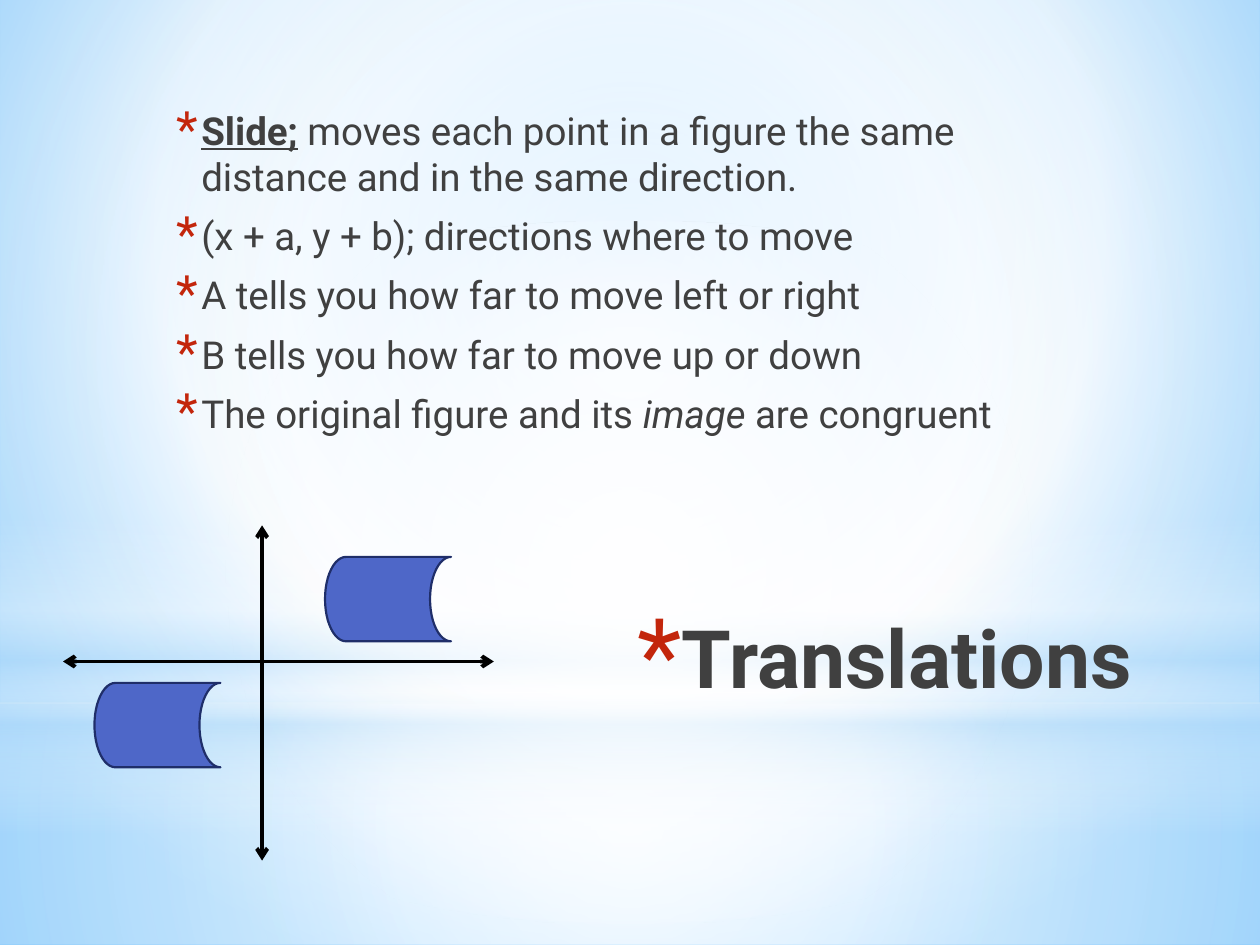
from lxml import etree
from pptx import Presentation
from pptx.dml.color import RGBColor
from pptx.enum.shapes import MSO_CONNECTOR, MSO_SHAPE
from pptx.enum.text import MSO_ANCHOR, PP_ALIGN
from pptx.oxml import parse_xml
from pptx.oxml.ns import qn
from pptx.util import Inches, Pt

RECTANGLE, OVAL = MSO_SHAPE.RECTANGLE, MSO_SHAPE.OVAL
FIGURE = MSO_SHAPE.FLOWCHART_STORED_DATA
STRAIGHT = MSO_CONNECTOR.STRAIGHT
TOP = MSO_ANCHOR.TOP
LEFT, RIGHT = PP_ALIGN.LEFT, PP_ALIGN.RIGHT

FONT = "Roboto"
TEXT = RGBColor(0x40, 0x40, 0x40)
BULLET = RGBColor(0xC3, 0x26, 0x0C)
FIGURE_FILL = RGBColor(0x4E, 0x67, 0xC8)
FIGURE_LINE = RGBColor(0x1F, 0x2E, 0x69)
BLACK = RGBColor(0, 0, 0)
WHITE = RGBColor(0xFF, 0xFF, 0xFF)
PALE_BLUE = RGBColor(0xB4, 0xDC, 0xFA)
SKY_BLUE = RGBColor(0x9E, 0xD5, 0xFF)
DEEP_BLUE = RGBColor(0x5B, 0xB9, 0xFF)

NAMESPACE = "http://schemas.openxmlformats.org/drawingml/2006/main"
CENTRE = (50, 50, 50, 50)
BACKDROP_STOPS = [(0, SKY_BLUE, 100), (60, WHITE, 100), (100, DEEP_BLUE, 100)]
# Shape, box, gradient stops (position, colour, opacity), focus or None for vertical
GLOWS = [
    (RECTANGLE, (0, 5.58, 10, 1.92),
     [(0, WHITE, 91), (37, WHITE, 76), (100, PALE_BLUE, 79)], CENTRE),
    (RECTANGLE, (0, 0, 10, 5.58),
     [(0, WHITE, 89), (48, WHITE, 62), (100, PALE_BLUE, 79)], CENTRE),
    (RECTANGLE, (0, 4.12, 10, 2.5),
     [(0, WHITE, 0), (29, WHITE, 30), (45, PALE_BLUE, 40),
      (55, WHITE, 26), (65, PALE_BLUE, 60), (100, WHITE, 0)], None),
    (OVAL, (0, 1.75, 10, 5.58), [(0, WHITE, 100), (56, WHITE, 0)], CENTRE),
]

TITLE = [[("Translations", {"bold": True})]]
POINTS = [
    [("Slide;", {"bold": True, "underline": True}), (" ", {"bold": True}),
     ("moves each point in a figure the same distance and in the same direction.", {})],
    [("(x + a, y + b); directions where to move", {})],
    [("A tells you how far to move left or right", {})],
    [("B tells you how far to move up or down", {})],
    [("The original figure and its ", {}), ("image", {"italic": True}),
     (" are congruent", {})],
]


def set_gradient(fill, properties, stops, focus):
    """Replace the fill held by a properties element with a gradient."""
    fill.solid()
    stop_xml = "".join(
        f'<a:gs pos="{position * 1000}"><a:srgbClr val="{colour}">'
        f'<a:alpha val="{opacity * 1000}"/></a:srgbClr></a:gs>'
        for position, colour, opacity in stops)
    if focus:
        sides = " ".join(f'{side}="{value * 1000}"' for side, value in zip("ltrb", focus))
        direction = f'<a:path path="circle"><a:fillToRect {sides}/></a:path>'
    else:
        direction = '<a:lin ang="5400000" scaled="0"/>'
    gradient = parse_xml(f'<a:gradFill xmlns:a="{NAMESPACE}" rotWithShape="1">'
                         f'<a:gsLst>{stop_xml}</a:gsLst>{direction}</a:gradFill>')
    properties.replace(properties.find(qn("a:solidFill")), gradient)


def add_plain_shape(slide, kind, box):
    shape = slide.shapes.add_shape(kind, *map(Inches, box))
    shape.shadow.inherit = False
    return shape


def add_backdrop(slide):
    fill = slide.background.fill
    fill.solid()
    properties = slide.element.find(".//" + qn("p:bgPr"))
    set_gradient(fill, properties, BACKDROP_STOPS, (20, 10, 20, 60))
    for kind, box, stops, focus in GLOWS:
        glow = add_plain_shape(slide, kind, box)
        glow.line.fill.background()
        set_gradient(glow.fill, glow.element.spPr, stops, focus)


def add_bullet(paragraph, indent, hanging, percent):
    properties = paragraph._p.get_or_add_pPr()
    properties.set("marL", str(Inches(indent)))
    properties.set("indent", str(-Inches(hanging)))
    colour = etree.SubElement(properties, qn("a:buClr"))
    etree.SubElement(colour, qn("a:srgbClr"), val=str(BULLET))
    etree.SubElement(properties, qn("a:buSzPct"), val=str(percent * 1000))
    etree.SubElement(properties, qn("a:buFont"), typeface=FONT)
    etree.SubElement(properties, qn("a:buChar"), char="*")


def add_bulleted_text(slide, box, paragraphs, size, bullet, paragraph_format):
    """Fill a box with bulleted paragraphs; bullet is indent, hanging, size percent."""
    frame = slide.shapes.add_textbox(*map(Inches, box)).text_frame
    frame.word_wrap = True
    frame.vertical_anchor = TOP
    for index, runs in enumerate(paragraphs):
        paragraph = frame.add_paragraph() if index else frame.paragraphs[0]
        for name, value in paragraph_format.items():
            setattr(paragraph, name, value)
        add_bullet(paragraph, *bullet)
        for text, run_format in runs:
            run = paragraph.add_run()
            run.text = text
            run.font.color.rgb = TEXT
            for name, value in {"name": FONT, "size": Pt(size), **run_format}.items():
                setattr(run.font, name, value)


def add_figure(slide, box):
    figure = add_plain_shape(slide, FIGURE, box)
    figure.fill.solid()
    figure.fill.fore_color.rgb = FIGURE_FILL
    figure.line.color.rgb = FIGURE_LINE
    figure.line.width = Pt(1.25)


def add_axis(slide, start, end):
    axis = slide.shapes.add_connector(STRAIGHT, *map(Inches, start + end))
    axis.line.color.rgb = BLACK
    axis.line.width = Pt(2.25)
    line = axis.line._get_or_add_ln()
    for tag in ("a:headEnd", "a:tailEnd"):
        etree.SubElement(line, qn(tag), type="arrow")
    etree.SubElement(axis.element.spPr, qn("a:effectLst"))


def add_translation_diagram(slide, box):
    """Draw the axes across the box, with a figure and its translated image."""
    left, top, width, height = box
    origin_x, origin_y = left + 1.58, top + 1.08
    for offset_x, offset_y in ((-1.33, 0.17), (0.5, -0.83)):
        add_figure(slide, (origin_x + offset_x, origin_y + offset_y, 1, 0.67))
    add_axis(slide, (origin_x, top), (origin_x, top + height))
    add_axis(slide, (left, origin_y), (left + width, origin_y))


def main():
    presentation = Presentation()
    presentation.slide_width, presentation.slide_height = Inches(10), Inches(7.5)
    slide = presentation.slides.add_slide(presentation.slide_layouts[6])
    add_backdrop(slide)
    add_bulleted_text(slide, (1.96, 4.78, 7.12, 1.25), TITLE, 46, (0.35, 0.35, 128),
                      {"alignment": RIGHT})
    add_bulleted_text(slide, (1.25, 0.8, 7, 3.8), POINTS, 22, (0.25, 0.2, 130),
                      {"alignment": LEFT, "space_before": Pt(4.4), "space_after": Pt(3)})
    add_translation_diagram(slide, (0.5, 4.17, 3.42, 2.66))
    presentation.save("out.pptx")


if __name__ == "__main__":
    main()
